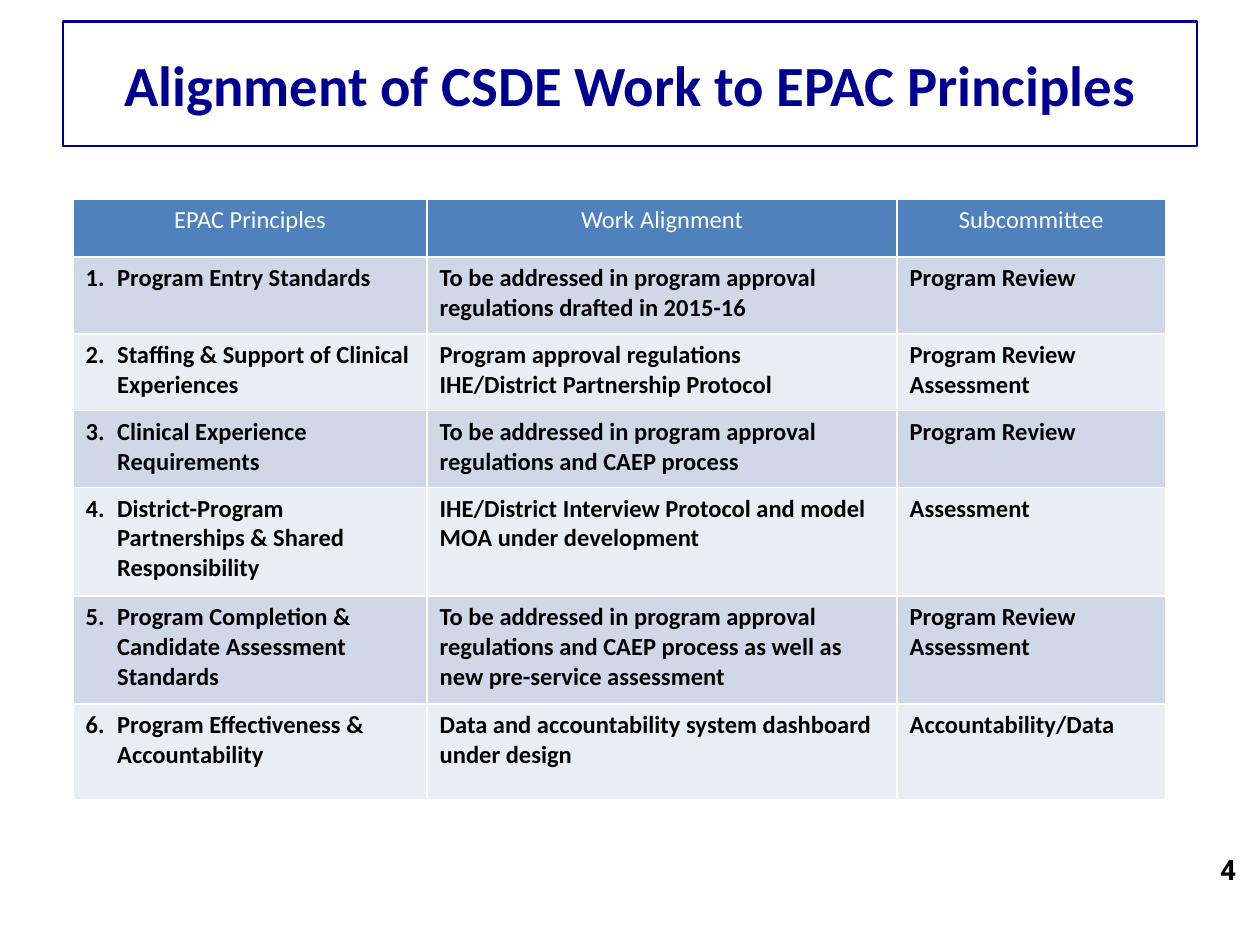
from dataclasses import dataclass

from lxml.etree import SubElement
from pptx import Presentation
from pptx.dml.color import RGBColor
from pptx.enum.shapes import MSO_SHAPE as Shape
from pptx.enum.text import MSO_ANCHOR as Anchor, PP_ALIGN as Align
from pptx.oxml.ns import qn
from pptx.util import Inches, Pt

NAVY, BLACK, WHITE = "000090", "000000", "FFFFFF"
HEADER_FILL = "4F81BD"
BAND_FILLS = ("D0D8E8", "E9EDF4")
COLUMN_WIDTHS = (2.81, 3.73, 2.13)
HEADER_HEIGHT = 0.46
HEADINGS = ("EPAC Principles", "Work Alignment", "Subcommittee")


@dataclass
class Principle:
    name: str
    work: str
    subcommittee: str
    height: float


PRINCIPLES = (
    Principle("Program Entry Standards",
              "To be addressed in program approval regulations drafted in 2015-16",
              "Program Review", 0.61),
    Principle("Staffing & Support of Clinical Experiences",
              "Program approval regulations\nIHE/District Partnership Protocol",
              "Program Review\nAssessment", 0.61),
    Principle("Clinical Experience Requirements",
              "To be addressed in program approval regulations and CAEP process",
              "Program Review", 0.61),
    Principle("District-Program Partnerships & Shared Responsibility",
              "IHE/District Interview Protocol and model MOA under development",
              "Assessment", 0.86),
    Principle("Program Completion & Candidate Assessment Standards",
              "To be addressed in program approval regulations and CAEP process "
              "as well as new pre-service assessment",
              "Program Review Assessment", 0.86),
    Principle("Program Effectiveness & Accountability",
              "Data and accountability system dashboard under design",
              "Accountability/Data", 0.76),
)


def rgb(value: str) -> RGBColor:
    return RGBColor.from_string(value)


def write(tf, text: str, size: float, color: str, bold: bool = True,
          align=Align.LEFT, font: str = "Calibri") -> None:
    tf.text = text
    for p in tf.paragraphs:
        p.alignment = align
        for r in p.runs:
            r.font.name = font
            r.font.size = Pt(size)
            r.font.bold = bold
            r.font.color.rgb = rgb(color)


def center_in_box(tf) -> None:
    tf.word_wrap = True
    tf.vertical_anchor = Anchor.MIDDLE
    tf.margin_left = tf.margin_right = Inches(0.05)
    tf.margin_top = tf.margin_bottom = Inches(0.05)


def style_cell(cell, fill: str) -> None:
    tc_pr = cell._tc.get_or_add_tcPr()
    for side in ("lnL", "lnR", "lnT", "lnB"):
        ln = SubElement(tc_pr, qn(f"a:{side}"), w=str(Pt(1)))
        SubElement(SubElement(ln, qn("a:solidFill")), qn("a:srgbClr"), val=WHITE)
    cell.fill.solid()
    cell.fill.fore_color.rgb = rgb(fill)


def number(p, start: int) -> None:
    p_pr = p._p.get_or_add_pPr()
    p_pr.set("marL", str(Inches(0.25)))
    p_pr.set("indent", str(-Inches(0.25)))
    SubElement(p_pr, qn("a:buFont"), typeface="+mj-lt")
    SubElement(p_pr, qn("a:buAutoNum"), type="arabicPeriod", startAt=str(start))


def add_title(slide) -> None:
    sp = slide.shapes.add_shape(Shape.RECTANGLE, Inches(0.5), Inches(0.17),
                                Inches(9), Inches(0.99))
    sp.shadow.inherit = False
    sp.fill.background()
    sp.line.color.rgb = rgb(NAVY)
    sp.line.width = Pt(1.5)
    center_in_box(sp.text_frame)
    write(sp.text_frame, "Alignment of CSDE Work to EPAC Principles", 32.4, NAVY,
          align=Align.CENTER)


def add_principles_table(slide) -> None:
    heights = (HEADER_HEIGHT, *(item.height for item in PRINCIPLES))
    table = slide.shapes.add_table(
        len(heights), len(COLUMN_WIDTHS), Inches(0.58), Inches(1.58),
        Inches(sum(COLUMN_WIDTHS)), Inches(sum(heights))).table
    table.horz_banding = False
    for column, width in zip(table.columns, COLUMN_WIDTHS):
        column.width = Inches(width)
    for row, height in zip(table.rows, heights):
        row.height = Inches(height)
    for cell, heading in zip(table.rows[0].cells, HEADINGS):
        style_cell(cell, HEADER_FILL)
        write(cell.text_frame, heading, 14, WHITE, bold=False, align=Align.CENTER)
    for i, item in enumerate(PRINCIPLES, start=1):
        cells = table.rows[i].cells
        for cell, text in zip(cells, (item.name, item.work, item.subcommittee)):
            style_cell(cell, BAND_FILLS[(i - 1) % 2])
            write(cell.text_frame, text, 14, BLACK)
        number(cells[0].text_frame.paragraphs[0], i)


def add_page_number(slide) -> None:
    sp = slide.shapes.add_textbox(Inches(7.53), Inches(6.7), Inches(2.33), Inches(0.4))
    center_in_box(sp.text_frame)
    write(sp.text_frame, "4", 16, BLACK, align=Align.RIGHT, font="Roboto")


def main() -> None:
    prs = Presentation()
    prs.slide_width, prs.slide_height = Inches(10), Inches(7.5)
    slide = prs.slides.add_slide(prs.slide_layouts[6])
    add_title(slide)
    add_principles_table(slide)
    add_page_number(slide)
    prs.save("out.pptx")


if __name__ == "__main__":
    main()
